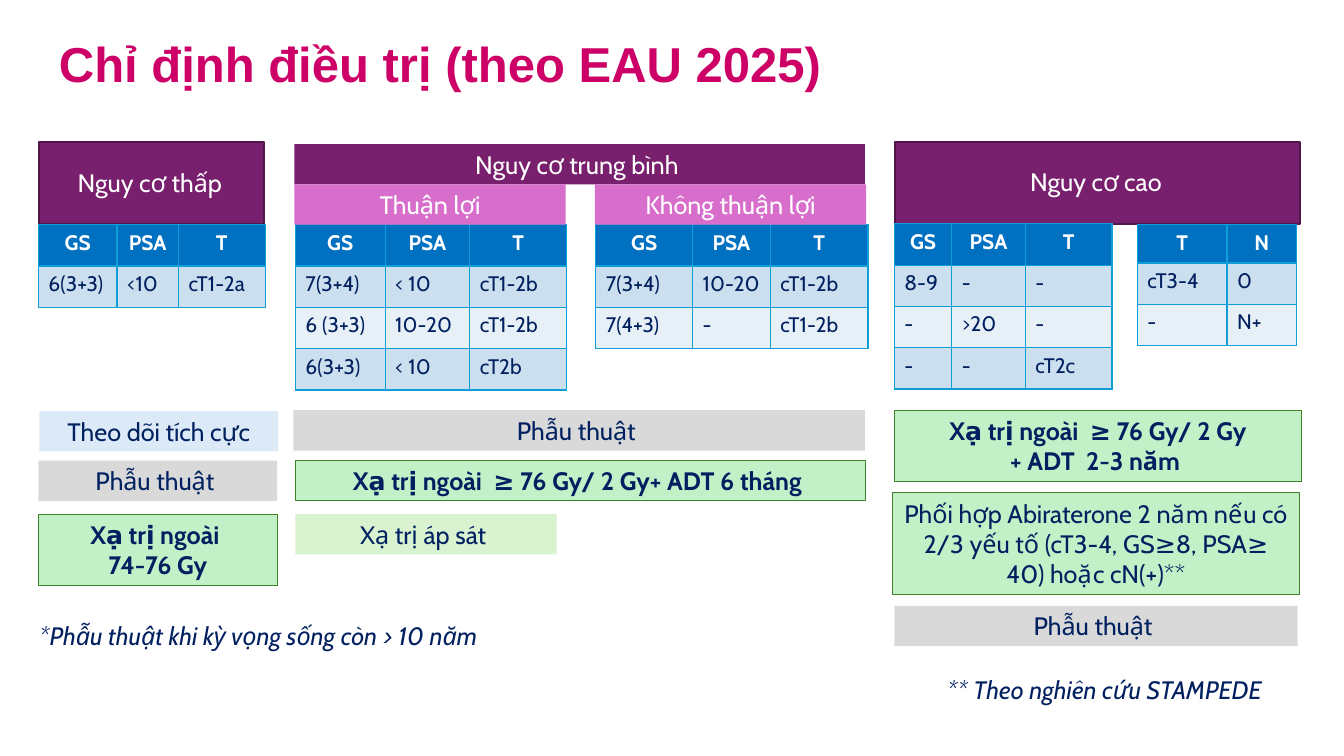
from pptx import Presentation
from pptx.dml.color import RGBColor as Rgb
from pptx.enum.shapes import MSO_SHAPE as Shape
from pptx.enum.text import MSO_ANCHOR as Anchor, MSO_AUTO_SIZE as Fit, PP_ALIGN as Align
from pptx.oxml import parse_xml
from pptx.oxml.ns import nsdecls
from pptx.util import Inches, Pt

COLORS = {
    "plum": "78206E", "edge": "501649", "orchid": "D86ECC", "pink": "CC0066",
    "navy": "002060", "white": "FFFFFF", "head": "0070C0", "grid": "0F9ED5",
    "odd": "CCDFEF", "even": "E7F0F7", "gray": "D9D9D9", "sky": "DCEAF7",
    "mint": "C2F1C8", "lime": "D9F2D0", "leaf": "3E8325",
}
ROW = 0.41
BAR = 0.4


def rgb(name):
    return Rgb.from_string(COLORS[name])


def write(frame, text, size=18, color="navy", font="Cabin", bold=False,
          italic=False, align=Align.CENTER):
    """Fill a text frame with one paragraph; a newline is a line break."""
    para = frame.paragraphs[0]
    para.text = text
    para.alignment = align
    for run in para.runs:
        face = run.font
        face.name, face.size = font, Pt(size)
        face.bold, face.italic = bold, italic
        face.color.rgb = rgb(color)


class Deck:
    def __init__(self):
        self.prs = Presentation()
        self.prs.slide_width = Inches(13.33)
        self.prs.slide_height = Inches(7.5)
        self.slide = self.prs.slides.add_slide(self.prs.slide_layouts[6])

    def rect(self, left, top, width, height, fill, line=None, weight=0.75):
        item = self.slide.shapes.add_shape(
            Shape.RECTANGLE, *map(Inches, (left, top, width, height)))
        item.shadow.inherit = False
        item.fill.solid()
        item.fill.fore_color.rgb = rgb(fill)
        if line:
            item.line.color.rgb = rgb(line)
            item.line.width = Pt(weight)
        else:
            item.line.fill.background()
        return item

    def label(self, text, left, top, width, height=BAR, fill=None, line=None, **style):
        """Text in a filled bar, or in a plain text box if there is no fill."""
        if fill:
            item = self.rect(left, top, width, height, fill, line)
        else:
            item = self.slide.shapes.add_textbox(
                *map(Inches, (left, top, width, height)))
        frame = item.text_frame
        frame.word_wrap = True
        frame.vertical_anchor = Anchor.TOP
        frame.auto_size = Fit.SHAPE_TO_FIT_TEXT
        write(frame, text, **style)

    def table(self, left, top, widths, rows, first=ROW):
        """Grid with a header row of height first and banded body rows."""
        highs = [first] + [ROW] * (len(rows) - 1)
        grid = self.slide.shapes.add_table(
            len(rows), len(widths), Inches(left), Inches(top),
            Inches(sum(widths)), Inches(sum(highs))).table
        for col, width in zip(grid.columns, widths):
            col.width = Inches(width)
        for y, (row, high) in enumerate(zip(rows, highs)):
            grid.rows[y].height = Inches(high)
            for x, text in enumerate(row):
                self.cell(grid.cell(y, x), text, y)

    def cell(self, cell, text, y):
        head = y == 0
        write(cell.text_frame, text, size=15, bold=head,
              color="white" if head else "navy",
              align=Align.CENTER if head else Align.LEFT)
        props = cell._tc.get_or_add_tcPr()
        for side in ("lnL", "lnR", "lnT", "lnB"):
            props.append(parse_xml(
                f'<a:{side} {nsdecls("a")} w="{Pt(1)}"><a:solidFill>'
                f'<a:srgbClr val="{COLORS["grid"]}"/></a:solidFill></a:{side}>'))
        cell.fill.solid()
        cell.fill.fore_color.rgb = rgb("head" if head else "odd" if y % 2 else "even")


def main():
    deck = Deck()
    label = deck.label
    for left, width in ((8.88, 4.01), (0.39, 2.23)):
        deck.rect(left, 1.41, width, 0.81, "plum", "edge", 1.5)

    names = ("GS", "PSA", "T")
    deck.table(2.93, 2.23, (0.89, 0.84, 0.96), (
        names, ("7(3+4)", "< 10", "cT1-2b"),
        ("6 (3+3)", "10-20", "cT1-2b"), ("6(3+3)", "< 10", "cT2b")))
    deck.table(5.91, 2.23, (0.96, 0.77, 0.97), (
        names, ("7(3+4)", "10-20", "cT1-2b"), ("7(4+3)", "-", "cT1-2b")))
    deck.table(8.87, 2.22, (0.57, 0.73, 0.86), (
        names, ("8-9", "-", "-"), ("-", ">20", "-"), ("-", "-", "cT2c")))
    deck.table(11.28, 2.23, (0.89, 0.69), (
        ("T", "N"), ("cT3-4", "0"), ("-", "N+")), first=0.38)
    deck.table(0.38, 2.23, (0.78, 0.61, 0.86), (names, ("6(3+3)", "<10", "cT1-2a")))

    # Risk groups
    label("Nguy cơ thấp ", 0.39, 1.61, 2.25, color="white")
    label("Nguy cơ trung bình ", 2.92, 1.43, 5.66, fill="plum", color="white")
    label("Nguy cơ cao", 8.85, 1.6, 4.04, color="white")
    for text, left in (("Thuận lợi", 2.92), ("Không thuận lợi", 5.9)):
        label(text, left, 1.83, 2.69, fill="orchid", color="white")

    # Treatments
    green = dict(fill="mint", line="leaf")
    label("Xạ trị ngoài  ≥ 76 Gy/ 2 Gy+ ADT 6 tháng ", 2.93, 4.57, 5.65,
          bold=True, **green)
    label("Xạ trị áp sát ", 2.93, 5.1, 2.59, fill="lime")
    label("Xạ trị ngoài  ≥ 76 Gy/ 2 Gy\n+ ADT  2-3 năm ", 8.87, 4.07, 4.04, 0.71,
          bold=True, **green)
    label("Phối hợp Abiraterone 2 năm nếu có 2/3 yếu tố (cT3-4, GS≥8, PSA≥ 40) "
          "hoặc cN(+)**", 8.85, 4.89, 4.04, 1.01, **green)
    label("Theo dõi tích cực", 0.39, 4.08, 2.37, fill="sky")
    label("Xạ trị ngoài \n74-76 Gy", 0.38, 5.1, 2.37, 0.71, bold=True, **green)
    for left, top, width in ((2.91, 4.07, 5.67), (0.38, 4.57, 2.37), (8.87, 6.01, 4)):
        label("Phẫu thuật ", left, top, width, fill="gray")

    # Title and notes
    label("Chỉ định điều trị (theo EAU 2025)", 0.17, 0.28, 8.4, 0.66,
          size=35, font="Arial", color="pink", bold=True)
    label("*Phẫu thuật khi kỳ vọng sống còn > 10 năm ", 0, 6.11, 5.18, italic=True)
    label("** Theo nghiên cứu STAMPEDE", 9.05, 6.64, 3.81, italic=True)
    deck.prs.save("out.pptx")


if __name__ == "__main__":
    main()
